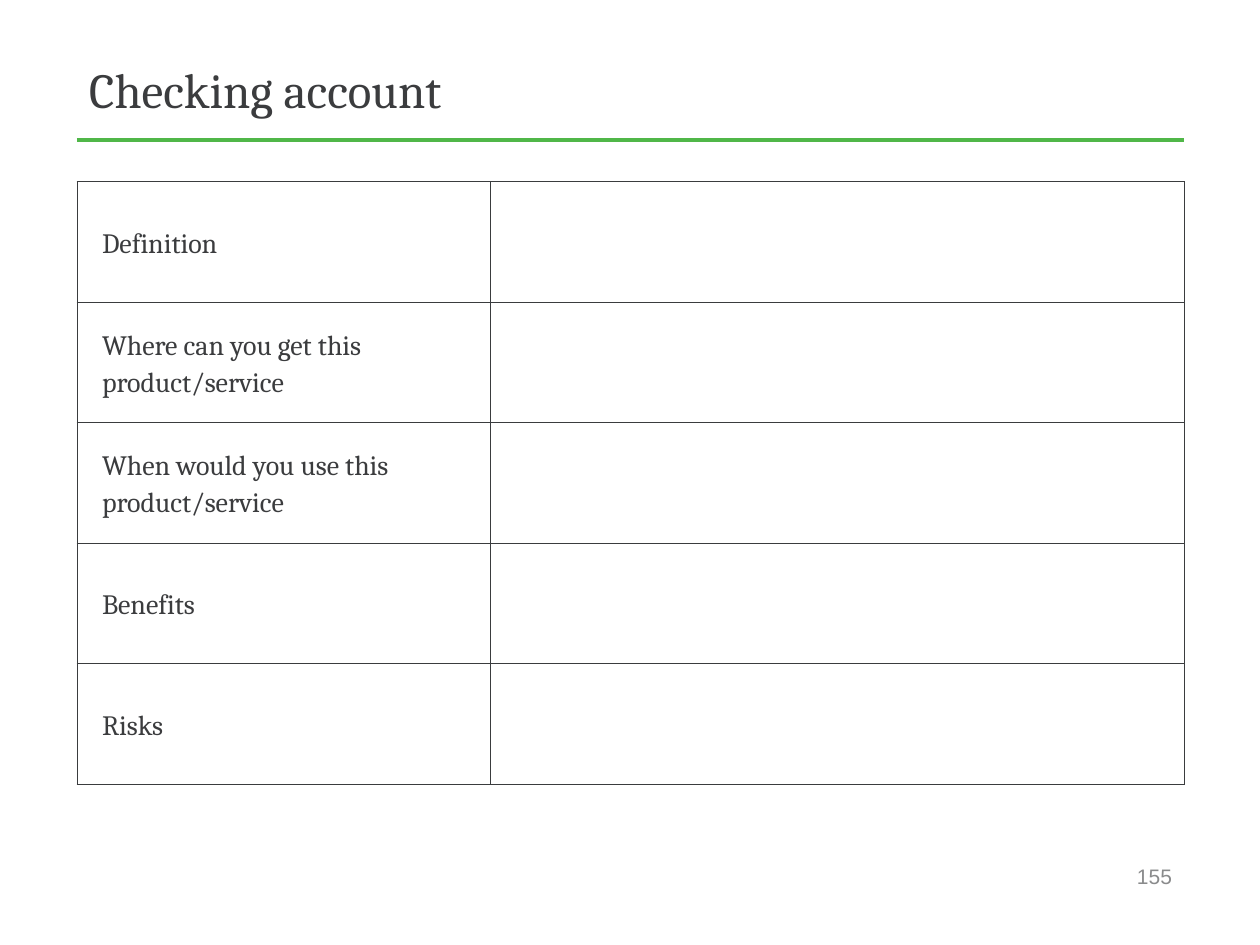
from dataclasses import dataclass

import pptx
import pptx.dml.color
import pptx.enum.shapes
import pptx.enum.text
import pptx.oxml
import pptx.oxml.ns
import pptx.util

Inches = pptx.util.Inches
Pt = pptx.util.Pt
RGB = pptx.dml.color.RGBColor.from_string
Anchor = pptx.enum.text.MSO_ANCHOR
Align = pptx.enum.text.PP_ALIGN


@dataclass(frozen=True)
class Theme:
    ink: str = "3B3C3E"
    accent: str = "50B748"
    muted: str = "8A8B8C"
    border: str = "3A3C3E"
    serif: str = "Cambria"
    sans: str = "Arial"
    title: int = 28
    body: int = 16
    small: int = 12


THEME = Theme()
TITLE = {"name": THEME.serif, "size": Pt(THEME.title), "color": THEME.ink}
BODY = {"name": THEME.serif, "size": Pt(THEME.body), "color": THEME.ink}
NUMBER = {"name": THEME.sans, "size": Pt(THEME.small), "color": THEME.muted}
LABELS = [
    "Definition",
    "Where can you get this product/service",
    "When would you use this product/service",
    "Benefits",
    "Risks",
]


def write(p, text, fmt):
    r = p.add_run()
    r.text = text
    for key, value in fmt.items():
        if key == "color":
            r.font.color.rgb = RGB(value)
        else:
            setattr(r.font, key, value)


def add_text(s, box, text, fmt, align):
    sp = s.shapes.add_textbox(*map(Inches, box))
    tf = sp.text_frame
    tf.word_wrap = True
    tf.vertical_anchor = Anchor.MIDDLE
    p = tf.paragraphs[0]
    p.alignment = align
    write(p, text, fmt)


def add_header(s, box, title):
    left, top, width, height = box
    bottom = top + height
    line = s.shapes.add_connector(
        pptx.enum.shapes.MSO_CONNECTOR.STRAIGHT,
        *map(Inches, (left, bottom, left + width, bottom)),
    )
    line.line.color.rgb = RGB(THEME.accent)
    line.line.width = Pt(2)
    pptx.oxml.ns.qn("a:effectLst")
    line._element.spPr.append(
        pptx.oxml.parse_xml(f"<a:effectLst {pptx.oxml.ns.nsdecls('a')}/>")
    )
    add_text(s, box, title, TITLE, Align.LEFT)


def set_borders(cell):
    tcPr = cell._tc.get_or_add_tcPr()
    for i, side in enumerate(("lnL", "lnR", "lnT", "lnB")):
        tcPr.insert(i, pptx.oxml.parse_xml(
            f"<a:{side} {pptx.oxml.ns.nsdecls('a')} w=\"{Pt(0.25)}\">"
            f"<a:solidFill><a:srgbClr val=\"{THEME.border}\"/></a:solidFill>"
            f"</a:{side}>"
        ))


def add_worksheet(s, box, labels, label_width):
    left, top, width, height = box
    table = s.shapes.add_table(len(labels), 2, *map(Inches, box)).table
    table.first_row = table.horz_banding = False
    for col, size in zip(table.columns, (label_width, width - label_width)):
        col.width = Inches(size)
    for row, label in zip(table.rows, labels):
        row.height = Inches(height / len(labels))
        for cell in row.cells:
            cell.fill.background()
            set_borders(cell)
        cell = row.cells[0]
        cell.vertical_anchor = Anchor.MIDDLE
        cell.margin_left = Inches(0.2)
        p = cell.text_frame.paragraphs[0]
        p.line_spacing = 1.15
        write(p, label, BODY)


def main():
    prs = pptx.Presentation()
    prs.slide_width, prs.slide_height = Inches(10), Inches(7.5)
    s = prs.slides.add_slide(prs.slide_layouts[6])
    add_header(s, (0.61, 0.3, 8.79, 0.81), "Checking account")
    add_worksheet(s, (0.61, 1.44, 8.79, 4.78), LABELS, 3.28)
    add_text(s, (6.23, 6.75, 3.17, 0.4), "155", NUMBER, Align.RIGHT)
    prs.save("out.pptx")


if __name__ == "__main__":
    main()
